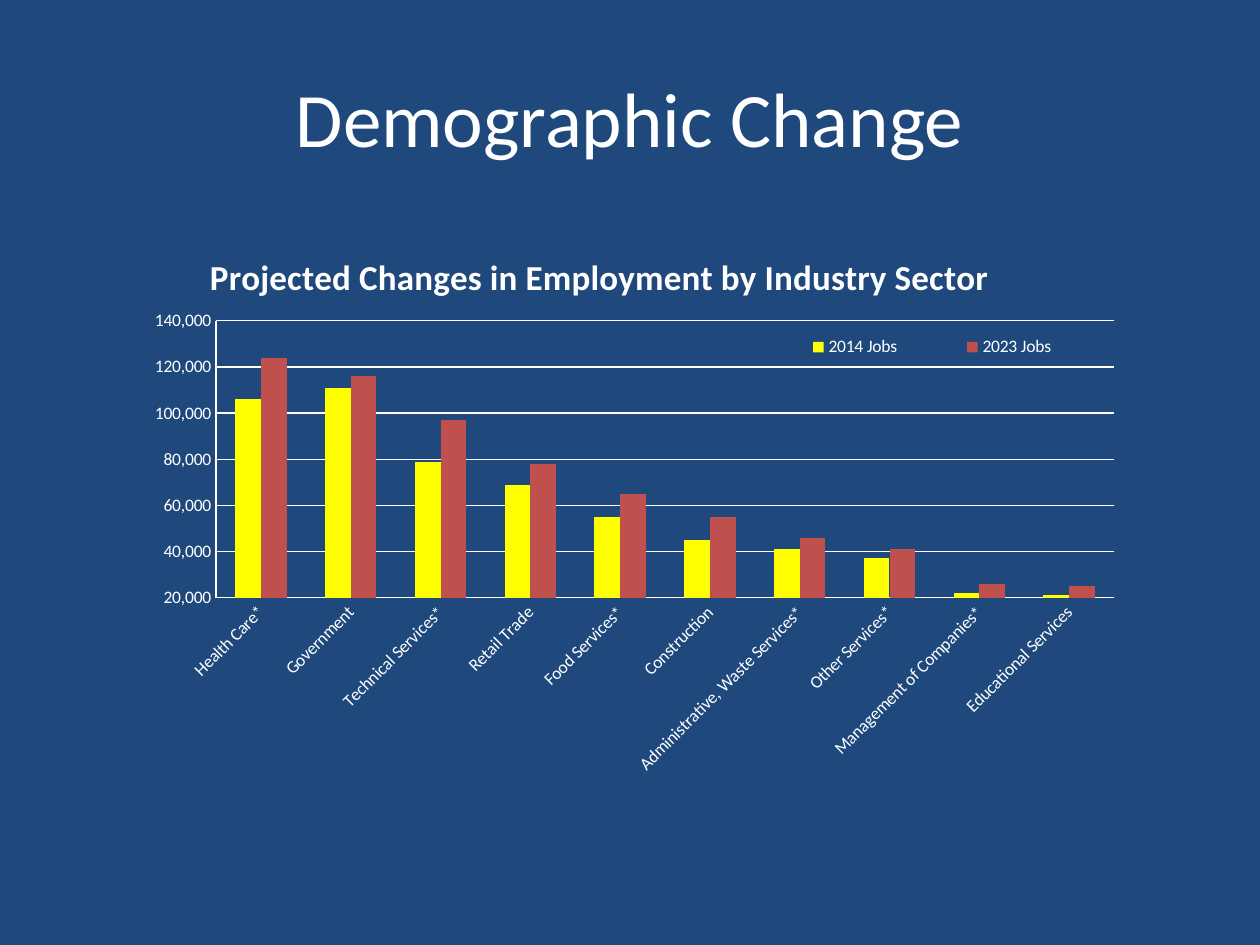
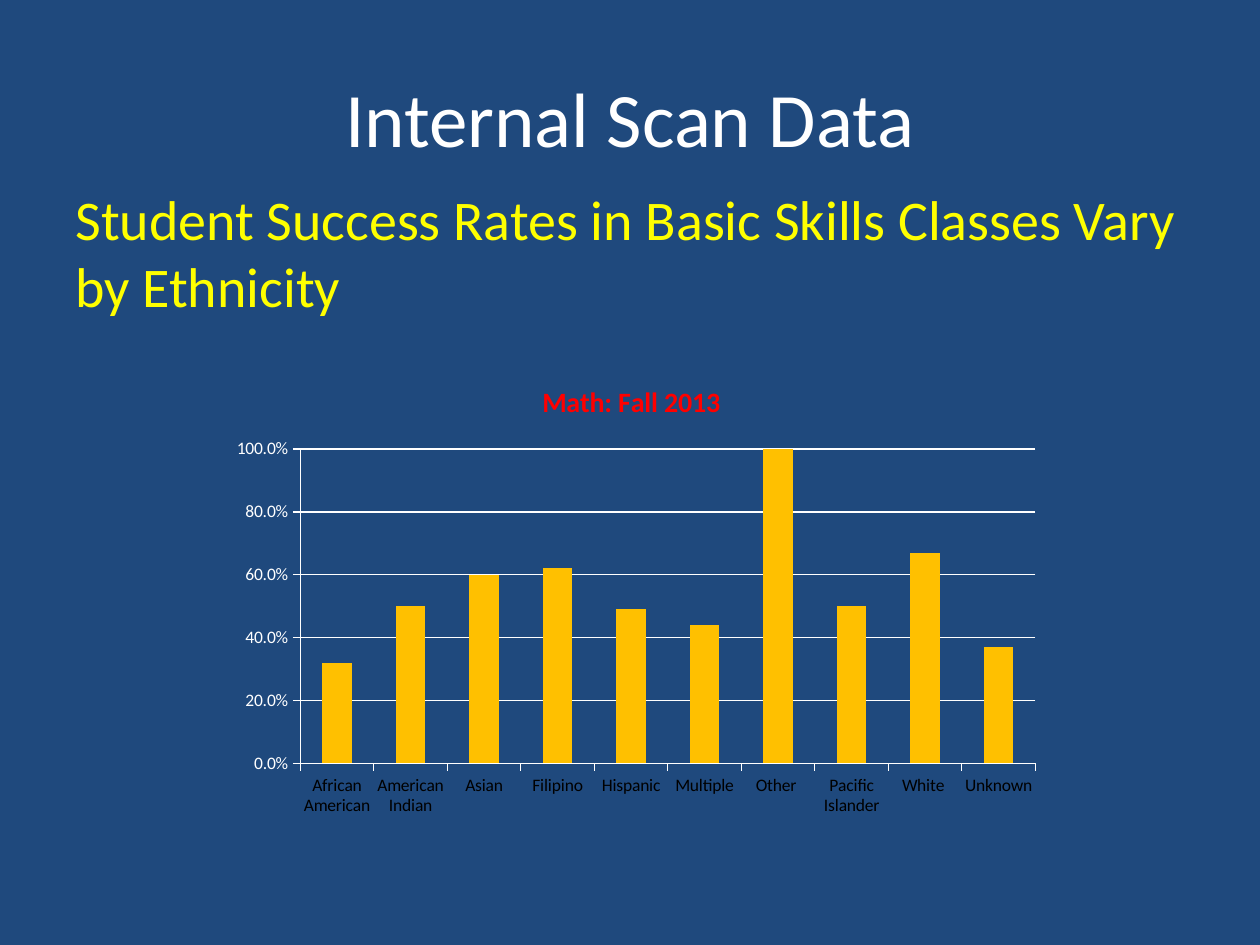
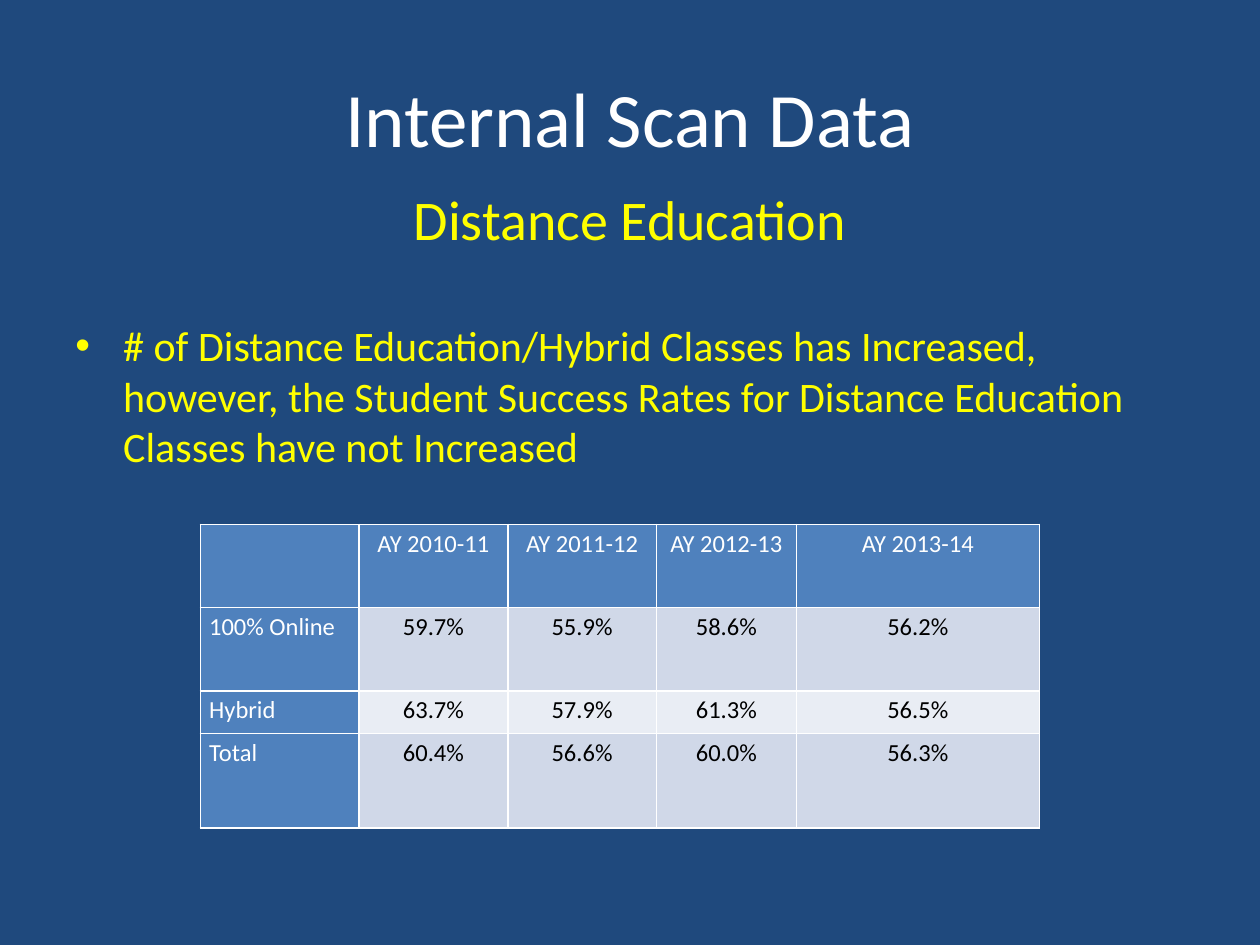
"""Build three slides on employment change, success rates and distance education."""
from lxml.etree import SubElement
from pptx import Presentation
from pptx.chart.data import CategoryChartData
from pptx.dml.color import RGBColor
from pptx.enum.chart import XL_CHART_TYPE, XL_LEGEND_POSITION, XL_TICK_MARK
from pptx.enum.text import MSO_ANCHOR, PP_ALIGN
from pptx.oxml.ns import qn
from pptx.util import Inches, Pt

COLORS = {
    "background": "1F497D", "text": "FFFFFF", "accent": "FFFF00", "ink": "000000",
    "jobs_2014": "FFFF00", "jobs_2023": "C0504D", "math": "FFC000", "math_title": "FF0000",
    "header": "4F81BD", "band_dark": "D0D8E8", "band_light": "E9EDF4",
}
RGB = {role: RGBColor.from_string(value) for role, value in COLORS.items()}
FONT = "Calibri"

deck = Presentation()
deck.slide_width, deck.slide_height = Inches(10), Inches(7.5)
COL, ROW = deck.slide_width / 20, deck.slide_height / 30


def style_font(font, size, color, bold=False):
    for attribute, value in {"name": FONT, "size": Pt(size), "bold": bold}.items():
        setattr(font, attribute, value)
    font.color.rgb = RGB[color]


def set_layout(part, index, percents, inner=False):
    for old in part.findall(qn("c:layout")):
        part.remove(old)
    layout = SubElement(part, qn("c:layout"))
    part.insert(index, layout)
    manual = SubElement(layout, qn("c:manualLayout"))
    settings = [("layoutTarget", "inner")] if inner else []
    settings += [("xMode", "edge"), ("yMode", "edge")]
    settings += [(tag, percent / 100) for tag, percent in zip("xywh", percents)]
    for tag, value in settings:
        SubElement(manual, qn(f"c:{tag}")).set("val", str(value))


TITLE_AREA = (1, 1.2, 18, 5)
BODY_AREA = (1, 5.65, 18, 21.12)
center = {"alignment": PP_ALIGN.CENTER}
bullet = {"space_before": Pt(39)}
slide_texts = [
    ("Demographic Change", []),
    ("Internal Scan Data",
     [("Student Success Rates in Basic Skills Classes Vary by Ethnicity", 32, {})]),
    ("Internal Scan Data",
     [("Distance Education", 32, center),
      ("# of Distance Education/Hybrid Classes has Increased, however, the Student "
       "Success Rates for Distance Education Classes have not Increased", 24, bullet)]),
]

slides = []
for heading, body in slide_texts:
    slide = deck.slides.add_slide(deck.slide_layouts[6])
    slides.append(slide)
    slide.background.fill.solid()
    slide.background.fill.fore_color.rgb = RGB["background"]
    blocks = [(TITLE_AREA, MSO_ANCHOR.MIDDLE, "text", [(heading, 44, center)]),
              (BODY_AREA, MSO_ANCHOR.TOP, "accent", body)]
    for (left, top, width, height), anchor, color, lines in blocks:
        if not lines:
            continue
        frame = slide.shapes.add_textbox(
            int(left * COL), int(top * ROW), int(width * COL), int(height * ROW)).text_frame
        frame.word_wrap = True
        frame.vertical_anchor = anchor
        for number, (text, size, formats) in enumerate(lines):
            paragraph = frame.add_paragraph() if number else frame.paragraphs[0]
            run = paragraph.add_run()
            run.text = text
            style_font(run.font, size, color)
            for attribute, value in formats.items():
                setattr(paragraph, attribute, value)
            if formats is bullet:
                properties = paragraph._p.get_or_add_pPr()
                properties.set("marL", str(Inches(0.38)))
                properties.set("indent", str(-Inches(0.38)))
                SubElement(properties, qn("a:buFont")).set("typeface", "Arial")
                SubElement(properties, qn("a:buChar")).set("char", "•")

charts = [
    {"slide": slides[0], "area": (1, 7, 18, 19.8),
     "title": ("Projected Changes in Employment by Industry Sector", 20, "text"),
     "title_at": (12.4, 4.1), "plot_at": (13.5, 16.1, 79.2, 44.4),
     "categories": ["Health Care*", "Government", "Technical Services*", "Retail Trade",
                    "Food Services*", "Construction", "Administrative, Waste Services*",
                    "Other Services*", "Management of Companies*", "Educational Services"],
     "series": [("2014 Jobs", "jobs_2014", [106000, 111000, 79000, 69000, 55000,
                                            45000, 41000, 37000, 22000, 21000]),
                ("2023 Jobs", "jobs_2023", [124000, 116000, 97000, 78000, 65000,
                                            55000, 46000, 41000, 26000, 25000])],
     "number_format": r"#,##0;[Red]\ \(#,##0\)", "tick": XL_TICK_MARK.NONE,
     "category_color": "text", "scale": {"minimum_scale": 20000}},
    {"slide": slides[1], "area": (3.5, 11.68, 13.2, 14.48),
     "title": ("Math: Fall 2013 ", 16, "math_title"),
     "title_at": (38.1, 2.2), "plot_at": (9.6, 17.8, 88.4, 68.9),
     "categories": ["African American", "American Indian", "Asian", "Filipino", "Hispanic",
                    "Multiple", "Other ", "Pacific Islander", "White ", "Unknown"],
     "series": [("Series 1", "math",
                 [0.32, 0.5, 0.6, 0.62, 0.49, 0.44, 1, 0.5, 0.67, 0.37])],
     "number_format": "0.0%", "tick": XL_TICK_MARK.OUTSIDE, "category_color": "ink",
     "scale": {"minimum_scale": 0, "maximum_scale": 1, "major_unit": 0.2}},
]

for details in charts:
    data = CategoryChartData()
    data.categories = details["categories"]
    for name, color, values in details["series"]:
        data.add_series(name, values)
    left, top, width, height = details["area"]
    chart = details["slide"].shapes.add_chart(
        XL_CHART_TYPE.COLUMN_CLUSTERED, int(left * COL), int(top * ROW),
        int(width * COL), int(height * ROW), data).chart
    style_font(chart.font, 10, "text")
    text, size, color = details["title"]
    chart.has_title = True
    chart.chart_title.text_frame.text = text
    style_font(chart.chart_title.text_frame.paragraphs[0].runs[0].font, size, color, True)
    set_layout(chart.chart_title._element, 1, details["title_at"])
    set_layout(chart._chartSpace.chart.plotArea, 0, details["plot_at"], inner=True)

    plot = chart.plots[0]
    for attribute, value in {"gap_width": 150, "overlap": 0, "vary_by_categories": False}.items():
        setattr(plot, attribute, value)
    for series, (name, color, values) in zip(plot.series, details["series"]):
        series.format.fill.solid()
        series.format.fill.fore_color.rgb = RGB[color]

    value_axis, category_axis = chart.value_axis, chart.category_axis
    value_axis.has_major_gridlines = True
    for attribute, value in details["scale"].items():
        setattr(value_axis, attribute, value)
    value_axis.tick_labels.number_format = details["number_format"]
    value_axis.tick_labels.number_format_is_linked = False
    for axis, color in ((value_axis, "text"), (category_axis, details["category_color"])):
        axis.major_tick_mark = details["tick"]
        axis.minor_tick_mark = XL_TICK_MARK.NONE
        style_font(axis.tick_labels.font, 10, color)
    for part in (value_axis, category_axis, value_axis.major_gridlines):
        part.format.line.color.rgb = RGB["text"]
        part.format.line.width = Pt(0.75)

    chart.has_legend = len(details["series"]) > 1
    if chart.has_legend:
        chart.legend.position = XL_LEGEND_POSITION.RIGHT
        chart.legend.include_in_layout = False
        style_font(chart.legend.font, 10, "text")
        set_layout(chart.legend._element, 1, (60.5, 16.8, 32.3, 7))
        category_axis._element.find(qn("c:txPr")).find(qn("a:bodyPr")).set("rot", "-2700000")

success_rates = [
    ["", "AY 2010-11", "AY 2011-12", "AY 2012-13", "AY 2013-14"],
    ["100% Online", "59.7%", "55.9%", "58.6%", "56.2%"],
    ["Hybrid", "63.7%", "57.9%", "61.3%", "56.5%"],
    ["Total", "60.4%", "56.6%", "60.0%", "56.3%"],
]
year_widths = [2.52, 2.36, 2.36, 2.22, 3.86]
mode_heights = [2.64, 2.64, 1.36, 3]
table = slides[2].shapes.add_table(
    len(mode_heights), len(year_widths), int(3.18 * COL), int(16.65 * ROW),
    int(sum(year_widths) * COL), int(sum(mode_heights) * ROW)).table
for column, width in zip(table.columns, year_widths):
    column.width = int(width * COL)
for row, height in zip(table.rows, mode_heights):
    row.height = int(height * ROW)

cell_margins = {"margin_left": Inches(0.07), "margin_right": Inches(0.07),
                "margin_top": 0, "margin_bottom": 0}
for r, rates in enumerate(success_rates):
    for c, text in enumerate(rates):
        cell = table.cell(r, c)
        is_header = r == 0 or c == 0
        for attribute, value in cell_margins.items():
            setattr(cell, attribute, value)
        paragraph = cell.text_frame.paragraphs[0]
        paragraph.line_spacing = 1.15
        paragraph.alignment = PP_ALIGN.CENTER if c else PP_ALIGN.LEFT
        if text:
            run = paragraph.add_run()
            run.text = text
            style_font(run.font, 14, "text" if is_header else "ink")
        borders = cell._tc.get_or_add_tcPr()
        for side in "LRTB":
            border = SubElement(borders, qn(f"a:ln{side}"), w=str(Pt(1)))
            solid = SubElement(border, qn("a:solidFill"))
            SubElement(solid, qn("a:srgbClr")).set("val", COLORS["text"])
        cell.fill.solid()
        band = "band_dark" if r % 2 else "band_light"
        cell.fill.fore_color.rgb = RGB["header" if is_header else band]

deck.save("out.pptx")
